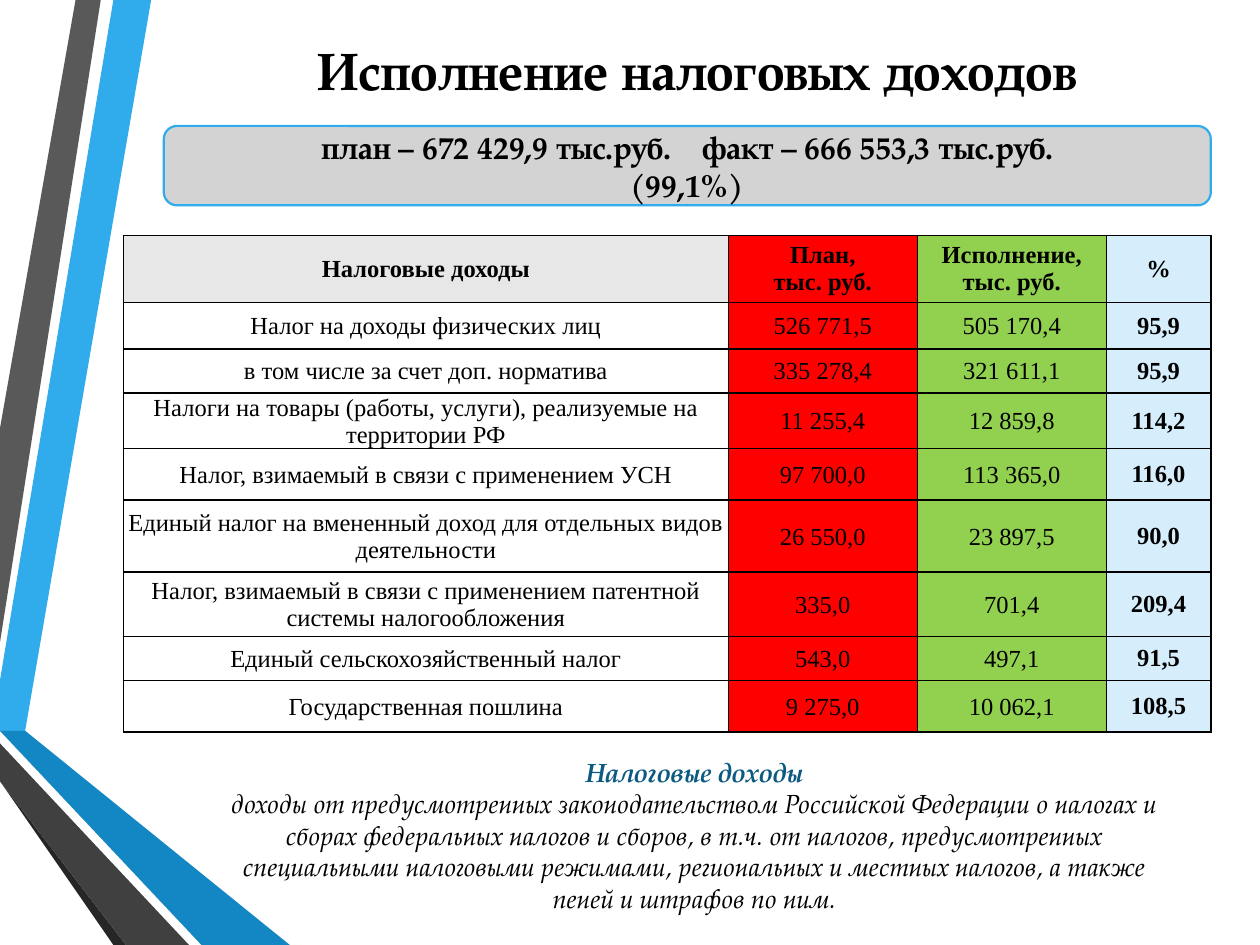
import dataclasses
import lxml.etree
import pptx
import pptx.dml.color
import pptx.enum.shapes
import pptx.enum.text
import pptx.oxml.ns
import pptx.util

ALIGN = pptx.enum.text.PP_ALIGN
ANCHOR = pptx.enum.text.MSO_ANCHOR
FIT = pptx.enum.text.MSO_AUTO_SIZE
SHAPE = pptx.enum.shapes.MSO_SHAPE
QN = pptx.oxml.ns.qn
COLS, ROWS = 100, 75


@dataclasses.dataclass(frozen=True)
class Theme:
    serif: str = "Times New Roman"
    book: str = "TeX Gyre Pagella"
    ink: str = "000000"
    white: str = "FFFFFF"
    sky: str = "30ACEC"
    blue: str = "1287C3"
    navy: str = "0C5A82"
    coal: str = "262626"
    slate: str = "404040"
    gray: str = "595959"
    silver: str = "D3D3D3"
    pale: str = "E7E7E7"
    red: str = "FF0000"
    green: str = "92D050"
    ice: str = "D6EEFB"
    head: int = 30
    total: int = 18
    note: int = 15
    cell: int = 14


class Deck:
    def __init__(self, theme):
        self.theme = theme
        self.file = pptx.Presentation()
        self.file.slide_width = pptx.util.Inches(10)
        self.file.slide_height = pptx.util.Inches(7.5)
        self.slide = self.file.slides.add_slide(self.file.slide_layouts[5])
        self.shapes = self.slide.shapes

    def col(self, count):
        return round(self.file.slide_width * count / COLS)

    def row(self, count):
        return round(self.file.slide_height * count / ROWS)

    def box(self, left, top, width, height):
        return self.col(left), self.row(top), self.col(width), self.row(height)

    def tint(self, part, color):
        part.fill.solid()
        part.fill.fore_color.rgb = pptx.dml.color.RGBColor.from_string(color)

    def words(self, frame, lines, size, font):
        frame.word_wrap = True
        for index, line in enumerate(lines):
            para = frame.paragraphs[0] if index == 0 else frame.add_paragraph()
            para.alignment = ALIGN.CENTER
            for text, look in line:
                run = para.add_run()
                run.text = text
                run.font.size = pptx.util.Pt(size)
                run.font.name = font
                run.font.bold = look.get("bold", False)
                run.font.italic = look.get("slant", False)
                color = look.get("color", self.theme.ink)
                run.font.color.rgb = pptx.dml.color.RGBColor.from_string(color)
                if "space" in look:
                    run._r.get_or_add_rPr().set("spc", str(look["space"] * 100))

    def stripe(self, points, color):
        start, *rest = points
        pen = self.shapes.build_freeform(*start, scale=(self.col(1), self.row(1)))
        pen.add_line_segments(rest, close=True)
        shape = pen.convert_to_shape()
        shape.shadow.inherit = False
        self.tint(shape, color)
        shape.line.fill.background()

    def title(self, place, text):
        shape = self.shapes.title
        shape.left, shape.top, shape.width, shape.height = self.box(*place)
        frame = shape.text_frame
        frame.auto_size = FIT.NONE
        frame.vertical_anchor = ANCHOR.MIDDLE
        self.words(frame, [[(text, {"bold": True})]], self.theme.head, self.theme.book)

    def panel(self, place, lines):
        shape = self.shapes.add_shape(SHAPE.ROUNDED_RECTANGLE, *self.box(*place))
        shape.shadow.inherit = False
        self.tint(shape, self.theme.silver)
        self.tint(shape.line, self.theme.sky)
        shape.line.width = pptx.util.Pt(1.25)
        shape.text_frame.vertical_anchor = ANCHOR.MIDDLE
        self.words(shape.text_frame, lines, self.theme.total, self.theme.book)

    def note(self, place, lines):
        frame = self.shapes.add_textbox(*self.box(*place)).text_frame
        frame.auto_size = FIT.SHAPE_TO_FIT_TEXT
        self.words(frame, lines, self.theme.note, self.theme.book)

    def edge(self, cell):
        props = cell._tc.get_or_add_tcPr()
        for side in ("lnL", "lnR", "lnT", "lnB"):
            line = lxml.etree.SubElement(props, QN("a:" + side), w=str(int(pptx.util.Pt(1))))
            fill = lxml.etree.SubElement(line, QN("a:solidFill"))
            lxml.etree.SubElement(fill, QN("a:srgbClr"), val=self.theme.ink)

    def table(self, place, widths, heights, data, fills):
        frame = self.shapes.add_table(len(data), len(widths), *self.box(*place))
        table = frame.table
        table.horz_banding = False
        for column, width in zip(table.columns, widths):
            column.width = self.col(width)
        for line, height in zip(table.rows, heights):
            line.height = self.row(height)
        last = len(widths) - 1
        for r, record in enumerate(data):
            for c, text in enumerate(record):
                cell = table.cell(r, c)
                self.edge(cell)
                self.tint(cell, self.theme.white if r and c == 0 else fills[c])
                cell.vertical_anchor = ANCHOR.MIDDLE
                if r:
                    side = 0.7 if c == last else 0.1
                    cell.margin_left = cell.margin_right = self.col(side)
                    cell.margin_top = self.row(0 if c == last else 0.1)
                    cell.margin_bottom = 0
                look = {"bold": r == 0 or c == last}
                lines = [[(part, look)] for part in text.split("\n")]
                self.words(cell.text_frame, lines, self.theme.cell, self.theme.serif)


def main():
    theme = Theme()
    deck = Deck(theme)
    stripes = [
        (theme.sky, [(0, 54.4), (0, 57.5), (2.2, 57.9), (11.7, 0), (8.9, 0)]),
        (theme.gray, [(8.3, 0), (5.5, 0), (0, 33.6), (0, 50.6)]),
        (theme.coal, [(0, 61.9), (0, 62.1), (9.3, 75), (9.9, 75)]),
        (theme.navy, [(0, 57.9), (0, 58), (15.6, 75), (16.3, 75)]),
        (theme.blue, [(0, 57.9), (16.3, 75), (23.3, 75), (2.2, 57.9), (0, 57.5)]),
        (theme.slate, [(0, 61.9), (9.9, 75), (15.1, 75), (0, 58.6)]),
    ]
    for color, points in stripes:
        deck.stripe(points, color)

    data = [
        ("Налоговые доходы", "План,\nтыс. руб.", "Исполнение,\nтыс. руб.", "%"),
        ("Налог на доходы физических лиц", "526 771,5", "505 170,4", "95,9"),
        ("в том числе за счет доп. норматива", "335 278,4", "321 611,1", "95,9"),
        ("Налоги на товары (работы, услуги), реализуемые на территории РФ",
         "11 255,4", "12 859,8", "114,2"),
        ("Налог, взимаемый в связи с применением УСН", "97 700,0", "113 365,0", "116,0"),
        ("Единый налог на вмененный доход для отдельных видов деятельности",
         "26 550,0", "23 897,5", "90,0"),
        ("Налог, взимаемый в связи с применением патентной системы налогообложения",
         "335,0", "701,4", "209,4"),
        ("Единый сельскохозяйственный налог", "543,0", "497,1", "91,5"),
        ("Государственная пошлина", "9 275,0", "10 062,1", "108,5"),
    ]
    deck.table((9.8, 18.7, 86.3, 39.4), (48, 15, 15, 8.3),
               (5.3, 3.7, 3.5, 4.4, 4.1, 5.7, 5.1, 3.5, 4.1), data,
               (theme.pale, theme.red, theme.green, theme.ice))

    deck.title((16.9, 3.1, 76.9, 4.9), "Исполнение налоговых доходов")
    bold = {"bold": True}
    deck.panel((13, 10, 83.1, 6.3), [
        [("план – 672 429,9 тыс.руб.", bold), (" ", {"bold": True, "space": 13}),
         ("факт – 666 553,3 тыс.руб.", bold)],
        [("(99,1%)", bold)],
    ])
    deck.note((16.5, 59.5, 77.2, 13.6), [
        [("Налоговые доходы", {"bold": True, "slant": True, "color": theme.navy})],
        [("доходы от предусмотренных законодательством Российской Федерации о налогах "
          "и сборах федеральных налогов и сборов, в т.ч. от налогов, предусмотренных "
          "специальными налоговыми режимами, региональных и местных налогов, "
          "а также пеней и штрафов по ним.", {"slant": True})],
    ])
    deck.file.save("out.pptx")


if __name__ == "__main__":
    main()
